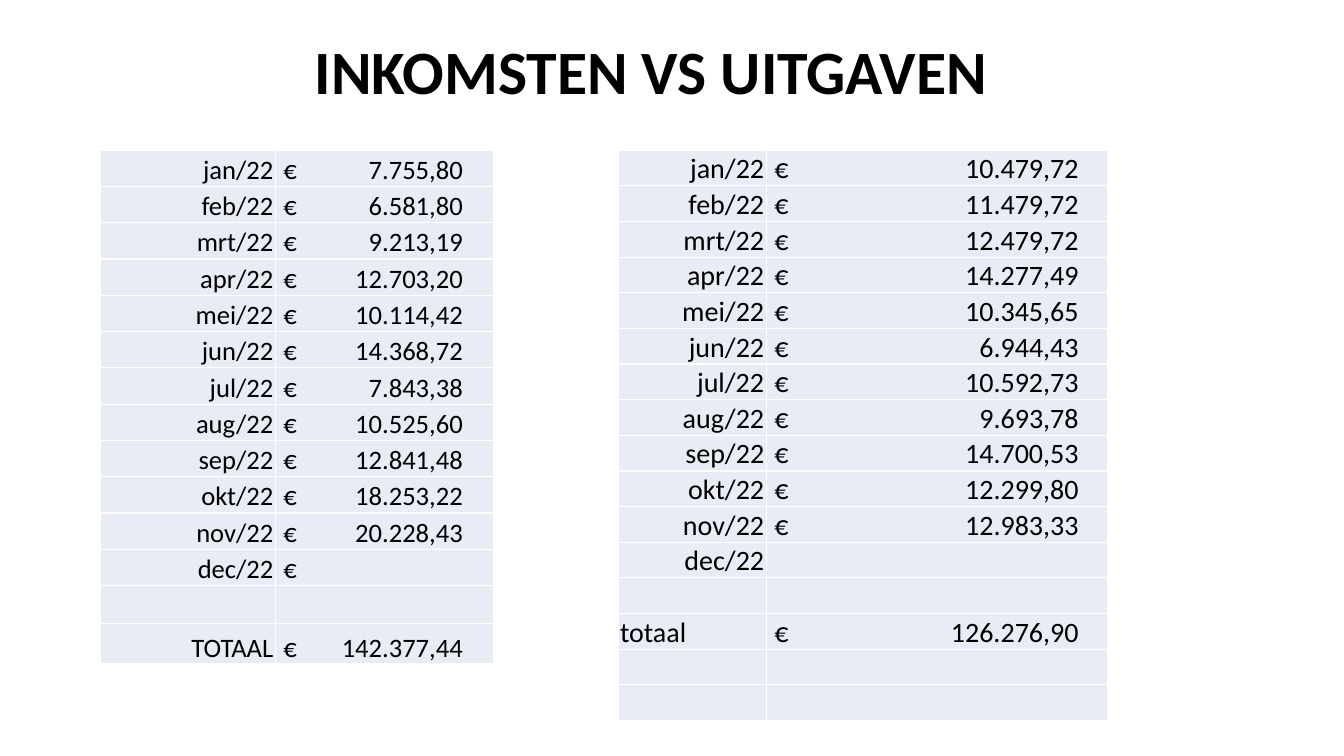
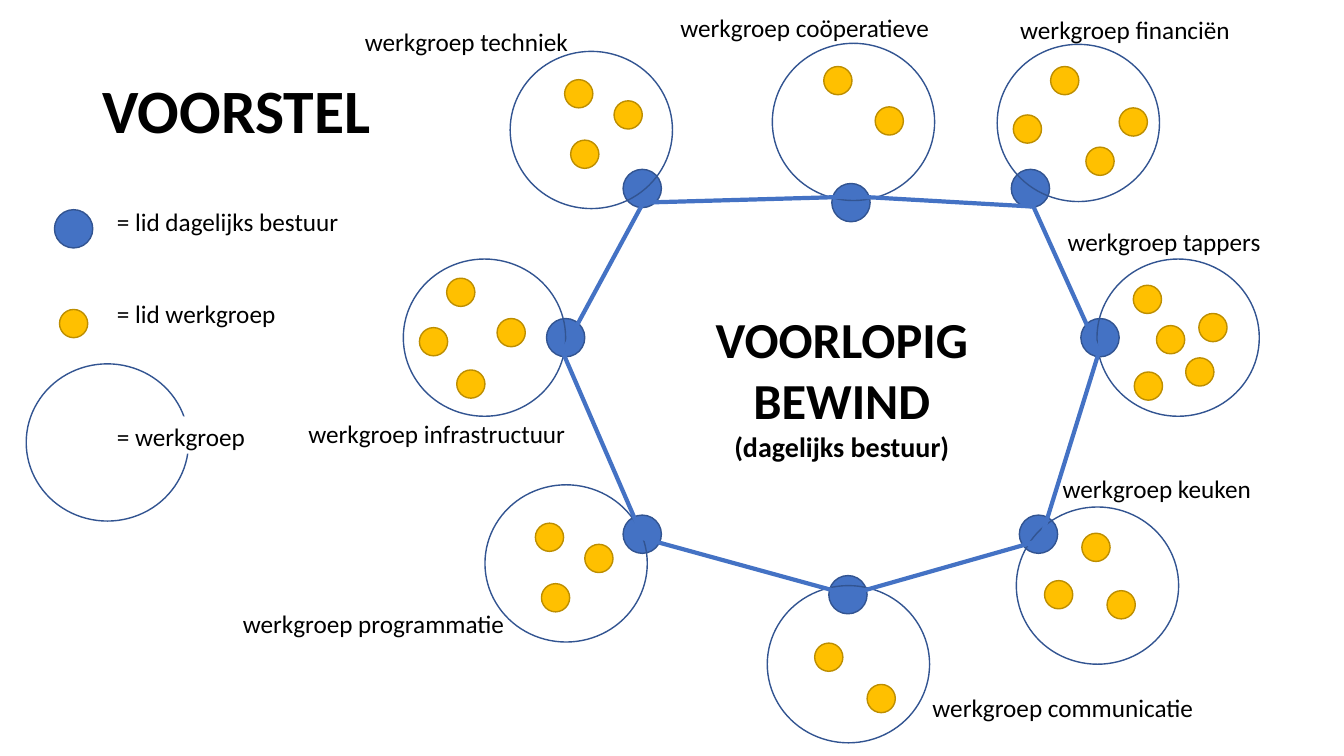
from lxml import etree
from pptx import Presentation
from pptx.dml.color import RGBColor
from pptx.enum import shapes, text
from pptx.oxml import ns
from pptx.util import Inches, Pt

FONT = "Calibri"
BLACK, WHITE, CELL = "000000", "FFFFFF", "E9EBF5"
BLUE, DARK_BLUE = "4472C4", "325491"
GOLD, DARK_GOLD = "FFC000", "BD8E00"
LEFT, CENTER, RIGHT = text.PP_ALIGN.LEFT, text.PP_ALIGN.CENTER, text.PP_ALIGN.RIGHT
BOARD, MEMBER, GROUP = (0.38, 0.38), (0.28, 0.28), (1.61, 1.56)


def write(slide, box, paragraphs, align=LEFT, title=False):
    """Add a text box; each paragraph is (text, size, bold, space before)."""
    frame = slide.shapes.add_textbox(*map(Inches, box)).text_frame
    frame.word_wrap = True
    if title:
        frame.vertical_anchor = text.MSO_ANCHOR.MIDDLE
    for i, (words, size, bold, before) in enumerate(paragraphs):
        paragraph = frame.add_paragraph() if i else frame.paragraphs[0]
        paragraph.text = words
        paragraph.alignment = align
        paragraph.space_before = Pt(before)
        if title:
            paragraph.line_spacing = 0.9
        font = paragraph.runs[0].font
        font.name, font.size, font.bold = FONT, Pt(size), bold
        font.color.rgb = RGBColor.from_string(BLACK)


def paint(shape, fill=None, line=None, width=1):
    shape.shadow.inherit = False
    for part, colour in ((shape.fill, fill), (shape.line.fill, line)):
        if colour:
            part.solid()
            part.fore_color.rgb = RGBColor.from_string(colour)
        else:
            part.background()
    if line:
        shape.line.width = Pt(width)


deck = Presentation()
deck.slide_width, deck.slide_height = Inches(13.33), Inches(7.5)
blank = deck.slide_layouts[6]

# Slide 1: income and expenses per month
finance = deck.slides.add_slide(blank)
write(finance, (0.71, 0.18, 11.5, 1.11), [("INKOMSTEN VS UITGAVEN", 44, True, 0)], CENTER, True)

months = ["jan", "feb", "mrt", "apr", "mei", "jun", "jul", "aug", "sep", "okt", "nov", "dec"]
income = ["7.755,80", "6.581,80", "9.213,19", "12.703,20", "10.114,42", "14.368,72",
          "7.843,38", "10.525,60", "12.841,48", "18.253,22", "20.228,43"]
expenses = ["10.479,72", "11.479,72", "12.479,72", "14.277,49", "10.345,65", "6.944,43",
            "10.592,73", "9.693,78", "14.700,53", "12.299,80", "12.983,33"]

# left, column widths, row heights, size, tab stop, amounts from January on, total label
ledgers = [
    (6.13, (1.47, 3.39), [0.35] * 16, 20, 3.02,
     [f"€\t{a}" for a in expenses] + ["", "", "€\t126.276,90"], "totaal", LEFT),
    (1, (1.73, 2.17), [0.36] * 12 + [0.38, 0.4], 19, 1.78,
     [f"€\t{a}" for a in income] + ["€", "", "€\t142.377,44"], "TOTAAL", RIGHT),
]
for left, widths, heights, size, tab, amounts, total, total_align in ledgers:
    ledger = finance.shapes.add_table(
        len(heights), 2, Inches(left), Inches(1.49),
        Inches(sum(widths)), Inches(sum(heights))).table
    ledger.first_row = ledger.horz_banding = False
    for column, width in zip(ledger.columns, widths):
        column.width = Inches(width)
    labels = [f"{month}/22" for month in months] + ["", total]
    for r, height in enumerate(heights):
        ledger.rows[r].height = Inches(height)
        for c, words in enumerate((labels, amounts)):
            cell = ledger.cell(r, c)
            cell.fill.solid()
            cell.fill.fore_color.rgb = RGBColor.from_string(CELL)
            cell.vertical_anchor = text.MSO_ANCHOR.BOTTOM
            cell.margin_left = Inches(0.08 if c else 0.02)
            cell.margin_right = cell.margin_top = Inches(0.02)
            cell.margin_bottom = 0
            paragraph = cell.text_frame.paragraphs[0]
            paragraph.text = words[r] if r < len(words) else ""
            paragraph.alignment = LEFT if c else total_align if r == 13 else RIGHT
            for run in paragraph.runs:
                run.font.name, run.font.size = FONT, Pt(size)
                run.font.color.rgb = RGBColor.from_string(BLACK)
            # Amounts line up on a right tab; empty cells keep the text size
            if c:
                tabs = etree.SubElement(paragraph._p.get_or_add_pPr(), ns.qn("a:tabLst"))
                etree.SubElement(tabs, ns.qn("a:tab"), pos=str(Inches(tab)), algn="r")
            etree.SubElement(paragraph._p, ns.qn("a:endParaRPr"), sz=str(size * 100))

# Slide 2: proposed organisation
proposal = deck.slides.add_slide(blank)
write(proposal, (0.92, 0.4, 11.5, 1.45), [("VOORSTEL", 44, True, 0)], LEFT, True)

# name, label, circle, board member, group members
workgroups = [
    ("techniek", (3.52, 0.21), (5.06, 0.51), (6.18, 1.68),
     [(5.6, 0.79), (5.66, 1.39), (6.09, 1)]),
    ("coöperatieve", (6.65, 0.07), (7.66, 0.43), (8.25, 1.82),
     [(8.17, 0.66), (8.68, 1.06)]),
    ("financiën", (10.02, 0.09), (9.89, 0.44), (10.03, 1.68),
     [(10.42, 0.66), (11.1, 1.07), (10.05, 1.14), (10.77, 1.46)]),
    ("tappers", (10.49, 2.2), (10.88, 2.57), (10.72, 3.16),
     [(11.24, 2.83), (11.89, 3.11), (11.47, 3.23), (11.25, 3.69), (11.76, 3.55)]),
    ("keuken", (10.44, 4.65), (10.08, 5.03), (10.11, 5.11),
     [(10.73, 5.29), (10.36, 5.76), (10.98, 5.86)]),
    ("communicatie", (9.15, 6.82), (7.61, 5.81), (8.22, 5.71),
     [(8.08, 6.38), (8.6, 6.79)]),
    ("programmatie", (2.31, 5.99), (4.81, 4.81), (6.18, 5.11),
     [(5.31, 5.19), (5.37, 5.79), (5.8, 5.4)]),
    ("infrastructuur", (2.96, 4.1), (4, 2.57), (5.42, 3.16),
     [(4.43, 2.76), (4.93, 3.16), (4.16, 3.25), (4.53, 3.67)]),
]
legend = ((0.26, 3.61), (0.54, 2.08), [(0.59, 3.07)])

# Circles of the workgroups and of the legend
for circle, board, members in [group[2:] for group in workgroups] + [legend]:
    discs = [(board, BOARD, BLUE, DARK_BLUE), (circle, GROUP, None, DARK_BLUE)]
    discs += [(member, MEMBER, GOLD, DARK_GOLD) for member in members]
    for place, extent, fill, line in discs:
        disc = proposal.shapes.add_shape(
            shapes.MSO_SHAPE.OVAL, *map(Inches, place + extent))
        paint(disc, fill, line)

# Ring that joins the board members
ring_points = [(6.38, 2.01), (5.58, 3.49), (6.38, 5.34), (8.42, 5.9),
               (10.32, 5.36), (10.9, 3.49), (10.25, 2.05), (8.5, 1.95)]
corners = [(Inches(x), Inches(y)) for x, y in ring_points]
outline = proposal.shapes.build_freeform(*corners[0])
outline.add_line_segments(corners[1:], close=True)
paint(outline.convert_to_shape(), None, BLUE, 3)

# Texts
write(proposal, (6.82, 3.01, 3.06, 1.65),
      [("VOORLOPIG BEWIND", 36, True, 0), ("(dagelijks bestuur)", 20, True, 0)], CENTER)
for name, label, *_ in workgroups:
    write(proposal, label + (2.84, 0.4), [(f"werkgroep {name}", 18, False, 0)])

legend_gap = proposal.shapes.add_shape(
    shapes.MSO_SHAPE.RECTANGLE, *map(Inches, (1.06, 4.13, 1.51, 0.37)))
paint(legend_gap, WHITE)
write(proposal, (1.06, 2, 2.65, 2.52),
      [("= lid dagelijks bestuur", 18, False, 0), ("= lid werkgroep", 18, False, 44),
       ("= werkgroep", 18, False, 66)])

deck.save("out.pptx")
